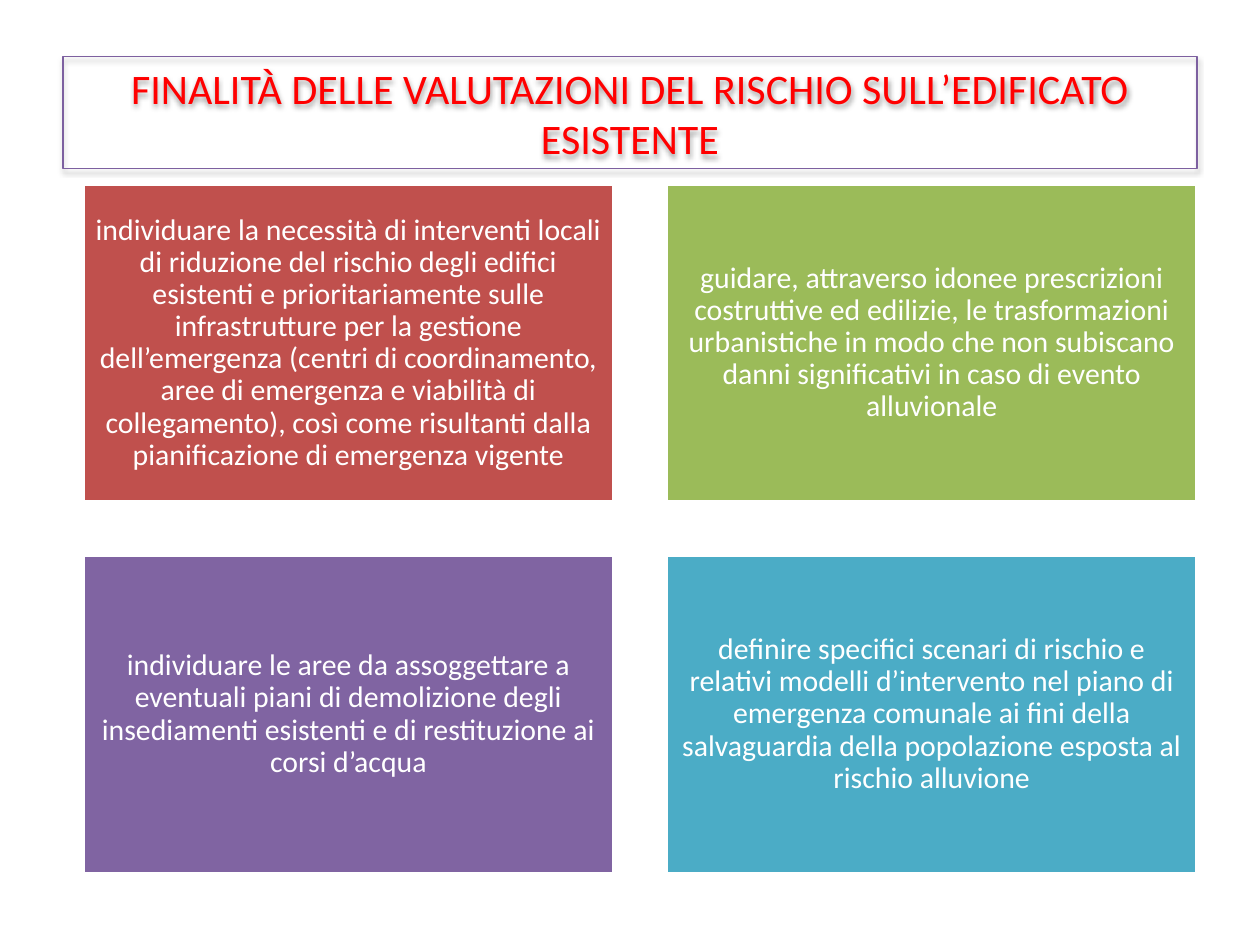
from lxml.etree import SubElement
from pptx import Presentation
from pptx.dml.color import RGBColor
from pptx.enum.shapes import MSO_SHAPE
from pptx.enum.text import MSO_ANCHOR, PP_ALIGN
from pptx.oxml.ns import qn
from pptx.util import Cm, Pt

TITLE = "FINALITÀ DELLE VALUTAZIONI DEL RISCHIO SULL’EDIFICATO ESISTENTE"
GOALS = [
    ("individuare la necessità di interventi locali di riduzione del rischio degli "
     "edifici esistenti e prioritariamente sulle infrastrutture per la gestione "
     "dell’emergenza (centri di coordinamento, aree di emergenza e viabilità di "
     "collegamento), così come risultanti dalla pianificazione di emergenza vigente", "red"),
    ("guidare, attraverso idonee prescrizioni costruttive ed edilizie, le "
     "trasformazioni urbanistiche in modo che non subiscano danni significativi "
     "in caso di evento alluvionale", "green"),
    ("individuare le aree da assoggettare a eventuali piani di demolizione degli "
     "insediamenti esistenti e di restituzione ai corsi d’acqua", "purple"),
    ("definire specifici scenari di rischio e relativi modelli d’intervento nel "
     "piano di emergenza comunale ai fini della salvaguardia della popolazione "
     "esposta al rischio alluvione", "teal"),
]
THEME = {
    "font": "Calibri", "head": 24, "body": 17,
    "title": "FF0000", "frame": "7D60A0", "white": "FFFFFF", "shade": "000000",
    "red": "C0504D", "green": "9BBB59", "purple": "8064A2", "teal": "4BACC6",
}
COLS = 2
LEFT, TOP, WIDTH, RATIO, GAP = 1.68, 3.71, 10.69, 0.6, 1.07
HEIGHT = WIDTH * RATIO


def color(name):
    return RGBColor.from_string(THEME[name])


def write(shape, text, size, tint):
    frame = shape.text_frame
    frame.word_wrap = True
    frame.vertical_anchor = MSO_ANCHOR.MIDDLE
    para = frame.paragraphs[0]
    para.alignment = PP_ALIGN.CENTER
    run = para.add_run()
    run.text = text
    run.font.name = THEME["font"]
    run.font.size = Pt(THEME[size])
    run.font.color.rgb = color(tint)
    return para


def outline(shape, tint, width):
    shape.line.color.rgb = color(tint)
    shape.line.width = Pt(width)


def shade(shape):
    props = shape.element.spPr
    effects = SubElement(props, qn("a:effectLst"))
    outer = SubElement(effects, qn("a:outerShdw"), blurRad=str(Pt(3.1)),
                       dist=str(Pt(1.6)), dir="5400000", rotWithShape="0")
    tone = SubElement(outer, qn("a:srgbClr"), val=THEME["shade"])
    SubElement(tone, qn("a:alpha"), val="38000")


def head(slide):
    title = slide.shapes.title
    title.left, title.top = Cm(1.27), Cm(1.14)
    title.width, title.height = Cm(22.86), Cm(2.26)
    write(title, TITLE, "head", "title")
    outline(title, "frame", 0.75)
    shade(title)


def card(slide, index, text, tint):
    row, col = divmod(index, COLS)
    box = slide.shapes.add_shape(
        MSO_SHAPE.RECTANGLE,
        Cm(LEFT + col * (WIDTH + GAP)), Cm(TOP + row * (HEIGHT + GAP)),
        Cm(WIDTH), Cm(HEIGHT))
    box.shadow.inherit = False
    box.fill.solid()
    box.fill.fore_color.rgb = color(tint)
    outline(box, "white", 2)
    frame = box.text_frame
    frame.margin_left = frame.margin_right = Cm(0.18)
    frame.margin_top = frame.margin_bottom = Cm(0.18)
    write(box, text, "body", "white").line_spacing = 0.9


def main():
    deck = Presentation()
    deck.slide_width, deck.slide_height = Cm(25.4), Cm(19.05)
    slide = deck.slides.add_slide(deck.slide_layouts[5])
    head(slide)
    for index, (text, tint) in enumerate(GOALS):
        card(slide, index, text, tint)
    deck.save("out.pptx")


if __name__ == "__main__":
    main()
